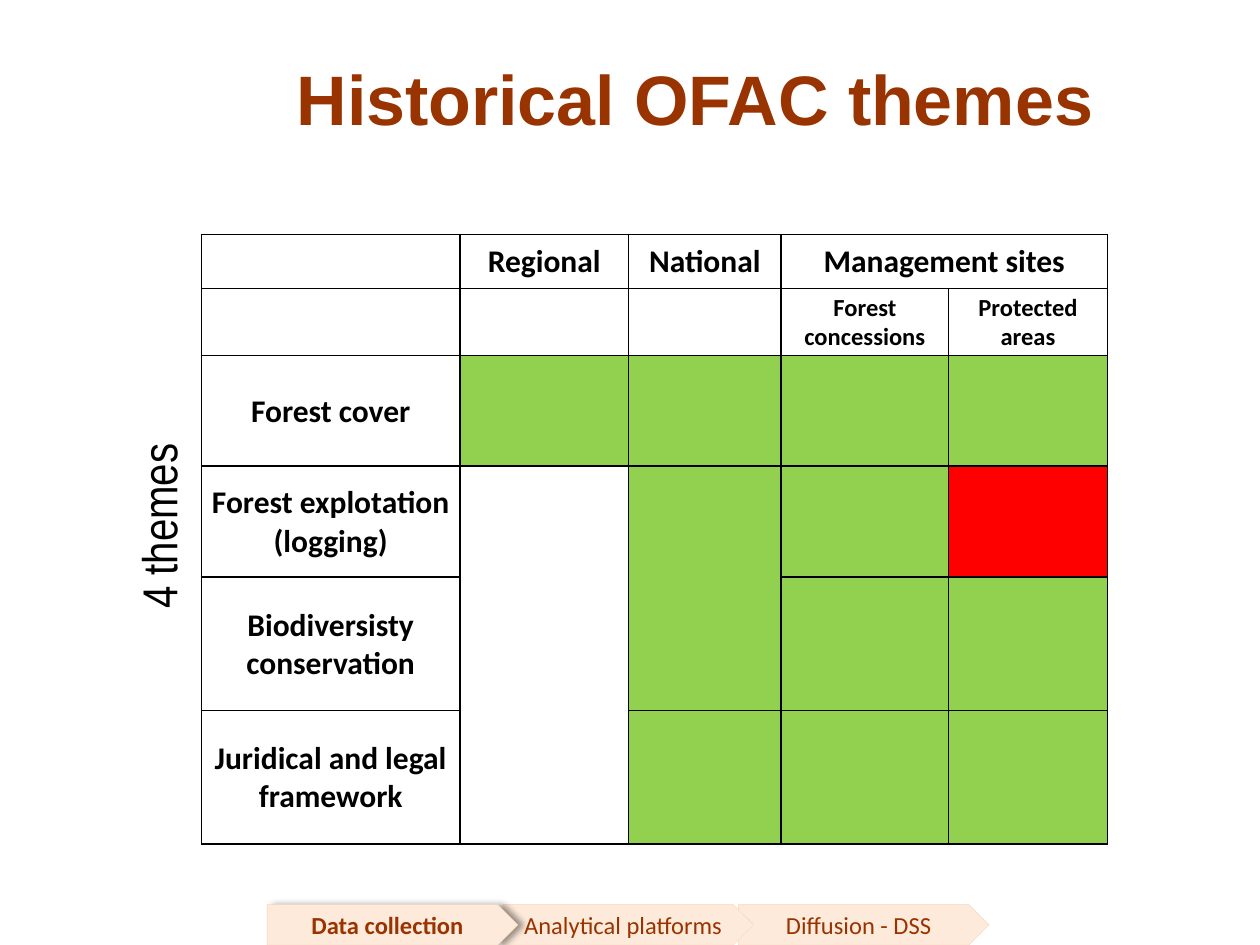
"""Build the slide on historical OFAC themes."""
from dataclasses import dataclass

from lxml.etree import SubElement
from pptx import Presentation
from pptx.dml.color import RGBColor
from pptx.enum.shapes import MSO_SHAPE
from pptx.enum.text import MSO_ANCHOR, MSO_AUTO_SIZE, PP_ALIGN
from pptx.oxml.ns import qn
from pptx.util import Inches, Pt

BLACK, WHITE, BROWN = "000000", "FFFFFF", "993300"
GREEN, RED = "92D050", "FF0000"
PEACH, PEACH_EDGE = "FDEADA", "FCD5B5"


@dataclass
class ThemeRow:
    height: float
    labels: tuple
    fills: tuple = (WHITE,) * 5
    size: int = 18


@dataclass
class Stage:
    label: str
    position: int
    current: bool = False


COLUMN_WIDTHS = (2.05, 1.34, 1.21, 1.33, 1.26)
ROWS = (
    ThemeRow(0.43, ("", "Regional", "National", "Management sites", "")),
    ThemeRow(0.53, ("", "", "", "Forest concessions", "Protected areas"), size=14),
    ThemeRow(0.88, ("Forest cover", "", "", "", ""), (WHITE, GREEN, GREEN, GREEN, GREEN)),
    ThemeRow(0.88, ("Forest explotation (logging)", "", "", "", ""),
             (WHITE, WHITE, GREEN, GREEN, RED)),
    ThemeRow(1.06, ("Biodiversisty conservation", "", "", "", ""),
             (WHITE, WHITE, GREEN, GREEN, GREEN)),
    ThemeRow(1.06, ("Juridical and legal framework", "", "", "", ""),
             (WHITE, WHITE, GREEN, GREEN, GREEN)),
)
MERGES = (((0, 3), (0, 4)), ((3, 1), (5, 1)), ((3, 2), (4, 2)))
STAGES = (
    Stage("Diffusion - DSS", 2),
    Stage("Analytical platforms", 1),
    Stage("Data collection", 0, current=True),
)


def color(value: str) -> RGBColor:
    return RGBColor.from_string(value)


def style(paragraph, name: str, size: int, value: str, bold=False, align=PP_ALIGN.CENTER) -> None:
    paragraph.alignment = align
    font = paragraph.font
    font.name, font.size, font.bold = name, Pt(size), bold
    font.color.rgb = color(value)


def add_borders(cell) -> None:
    properties = cell._tc.get_or_add_tcPr()
    for side in ("a:lnL", "a:lnR", "a:lnT", "a:lnB"):
        border = SubElement(properties, qn(side), w=str(Pt(1)))
        SubElement(SubElement(border, qn("a:solidFill")), qn("a:srgbClr"), val=BLACK)


def add_themes_table(slide) -> None:
    table = slide.shapes.add_table(
        len(ROWS), len(COLUMN_WIDTHS), Inches(1.6), Inches(1.86), Inches(7.18), Inches(4.84)
    ).table
    table.first_row = table.horz_banding = False
    for column, width in zip(table.columns, COLUMN_WIDTHS):
        column.width = Inches(width)
    for index, theme in enumerate(ROWS):
        table.rows[index].height = Inches(theme.height)
        for column, (label, fill) in enumerate(zip(theme.labels, theme.fills)):
            cell = table.cell(index, column)
            cell.margin_left = cell.margin_right = cell.margin_top = Inches(0.01)
            cell.margin_bottom = 0
            cell.vertical_anchor = MSO_ANCHOR.MIDDLE
            add_borders(cell)
            cell.fill.solid()
            cell.fill.fore_color.rgb = color(fill)
            if label:
                cell.text = label
                style(cell.text_frame.paragraphs[0], "Calibri", theme.size, BLACK, bold=True)
    for first, last in MERGES:
        table.cell(*first).merge(table.cell(*last))


def add_stage(group, stage: Stage) -> None:
    arrow = group.shapes.add_shape(
        MSO_SHAPE.PENTAGON, Inches(2.12 + 1.87 * stage.position), Inches(7.18),
        Inches(1.99), Inches(0.32)
    )
    arrow.fill.solid()
    arrow.fill.fore_color.rgb = color(PEACH)
    arrow.line.color.rgb = color(PEACH_EDGE)
    arrow.line.width = Pt(0.25)
    arrow.shadow.inherit = False
    if stage.current:
        effects = arrow._element.spPr.find(qn("a:effectLst"))
        shadow = SubElement(effects, qn("a:outerShdw"), blurRad=str(Pt(4)), dist=str(Pt(3)),
                            dir="0", algn="l", rotWithShape="0")
        shade = SubElement(shadow, qn("a:srgbClr"), val=BLACK)
        SubElement(shade, qn("a:alpha"), val="40000")
    frame = arrow.text_frame
    frame.text = stage.label
    frame.vertical_anchor = MSO_ANCHOR.MIDDLE
    style(frame.paragraphs[0], "Calibri", 14, BROWN, bold=stage.current)


def add_themes_label(slide) -> None:
    label = slide.shapes.add_textbox(Inches(0), Inches(3.39), Inches(2.51), Inches(0.57))
    label.rotation = 270
    frame = label.text_frame
    frame.word_wrap = True
    frame.auto_size = MSO_AUTO_SIZE.SHAPE_TO_FIT_TEXT
    frame.text = "4 themes"
    style(frame.paragraphs[0], "Arial Narrow", 28, BLACK, align=PP_ALIGN.LEFT)


def set_title(slide) -> None:
    title = slide.shapes.title
    title.left, title.top = Inches(1.53), Inches(0.3)
    title.width, title.height = Inches(7.97), Inches(0.95)
    title.text_frame.text = "Historical OFAC themes"
    title.text_frame.vertical_anchor = MSO_ANCHOR.MIDDLE
    style(title.text_frame.paragraphs[0], "Arial", 40, BROWN, bold=True)


def main() -> None:
    presentation = Presentation()
    presentation.slide_width, presentation.slide_height = Inches(10), Inches(7.5)
    slide = presentation.slides.add_slide(presentation.slide_layouts[5])
    add_themes_table(slide)
    add_themes_label(slide)
    set_title(slide)
    stages_group = slide.shapes.add_group_shape()
    for stage in STAGES:
        add_stage(stages_group, stage)
    presentation.save("out.pptx")


if __name__ == "__main__":
    main()
